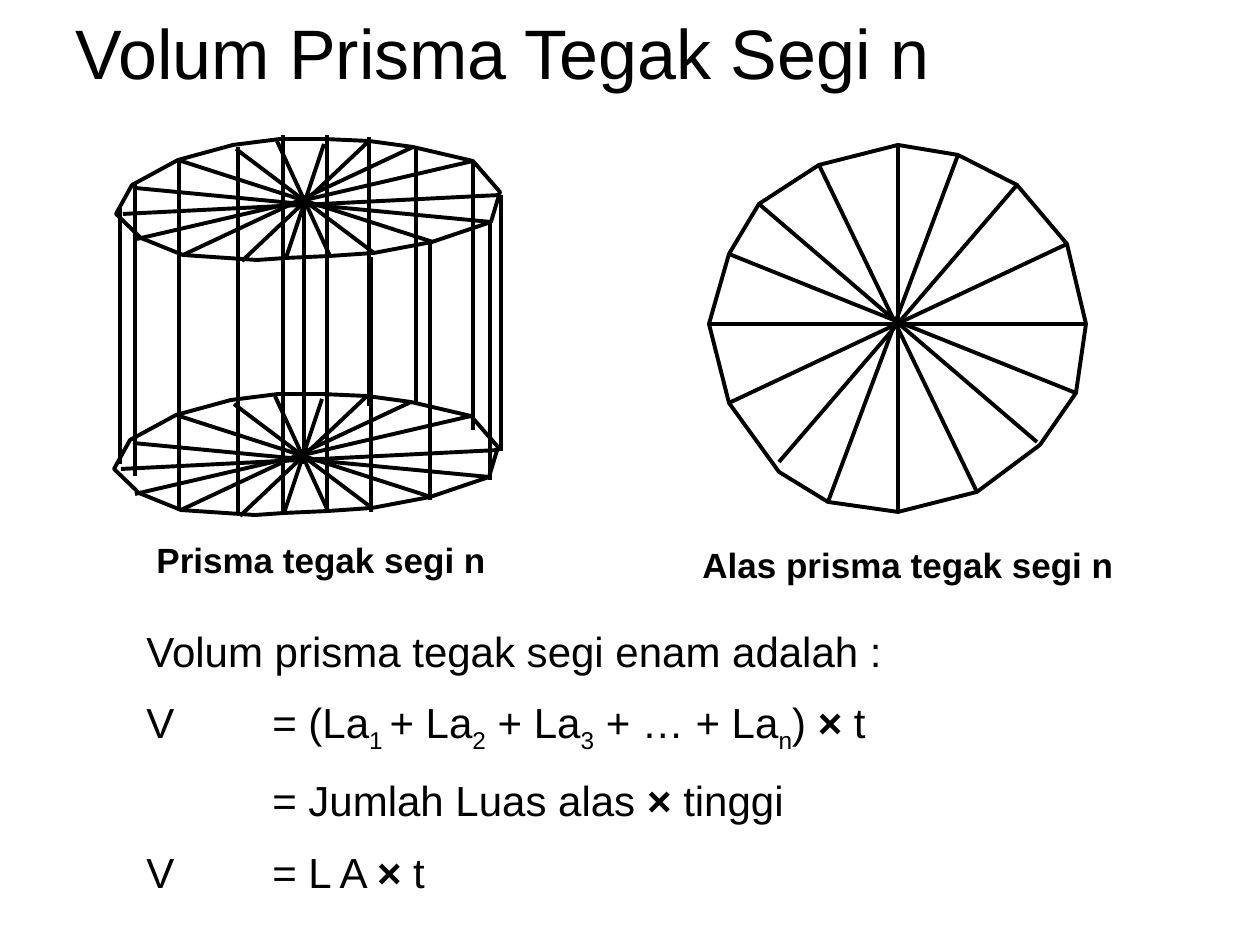
from dataclasses import dataclass

from lxml.etree import SubElement
from pptx import Presentation
from pptx.dml.color import RGBColor
from pptx.enum.shapes import MSO_CONNECTOR
from pptx.enum.text import MSO_ANCHOR
from pptx.oxml.ns import qn
from pptx.util import Pt

PX = 914400 / 126


@dataclass(frozen=True)
class Theme:
    ink: RGBColor = RGBColor(0, 0, 0)
    paper: RGBColor = RGBColor(255, 255, 255)
    font: str = "Arial"
    title: Pt = Pt(40)
    body: Pt = Pt(24)
    caption: Pt = Pt(20)
    stroke: Pt = Pt(2.25)
    paragraph_gap: Pt = Pt(12)


THEME = Theme()
EQUALS_TAB = 126

PRISM_RIM = [(116, 214), (132, 185), (178, 160), (233, 145), (280, 139), (324, 139),
             (369, 141), (413, 147), (473, 161), (500, 192), (491, 222), (432, 242),
             (374, 253), (330, 256), (286, 258), (257, 260), (183, 255), (141, 238)]
PRISM_SPOKES = [((123, 214), (501, 195)), ((135, 188), (491, 222)),
                ((178, 160), (433, 242)), ((236, 149), (374, 253)),
                ((277, 141), (330, 256)), ((324, 144), (286, 258)),
                ((369, 141), (242, 261)), ((413, 147), (183, 255)),
                ((473, 161), (137, 239))]
BASE_SHIFT = (-2, 255)
# Upright edges as x, top, bottom; the first is the axis
PRISM_EDGES = [(304, 195, 464), (120, 208, 464), (135, 232, 476), (179, 244, 508),
               (238, 257, 513), (283, 257, 513), (327, 257, 510), (371, 257, 512),
               (430, 244, 500), (490, 221, 480), (501, 195, 451), (135, 184, 440),
               (179, 159, 415), (238, 147, 403), (283, 135, 403), (327, 135, 391),
               (369, 137, 406), (416, 147, 403), (473, 163, 430)]

POLYGON_RIM = [(709, 324), (729, 254), (759, 204), (819, 165), (898, 145), (958, 155),
               (1017, 185), (1067, 244), (1086, 324), (1076, 393), (1040, 445),
               (977, 492), (898, 512), (828, 502), (779, 472), (729, 403)]
POLYGON_SPOKES = [((898, 145), (898, 512)), ((709, 324), (1086, 324)),
                  ((1017, 185), (779, 462)), ((759, 204), (1037, 442)),
                  ((819, 165), (977, 492)), ((958, 155), (828, 502)),
                  ((729, 254), (1076, 393)), ((1067, 244), (729, 403))]

# Each line is a list of (text, style); style is "", "sub" or "bold"
FORMULA = [
    [("Volum prisma tegak segi enam adalah :", "")],
    [("V \t= (La", ""), ("1 ", "sub"), ("+ La", ""), ("2", "sub"), (" + La", ""),
     ("3", "sub"), (" + … + La", ""), ("n", "sub"), (") ", ""), ("×", "bold"), (" t", "")],
    [("\t= Jumlah Luas alas ", ""), ("× ", "bold"), ("tinggi", "")],
    [("V\t= L A ", ""), ("×", "bold"), (" t", "")],
]


def px(length):
    return round(length * PX)


def add_line(shapes, start, end):
    line = shapes.add_connector(MSO_CONNECTOR.STRAIGHT, *map(px, start + end))
    line.line.color.rgb = THEME.ink
    line.line.width = THEME.stroke
    SubElement(line._element.spPr, qn("a:effectLst"))


def add_outline(shapes, points):
    builder = shapes.build_freeform(*points[0], scale=PX)
    builder.add_line_segments(points[1:], close=True)
    outline = builder.convert_to_shape()
    outline.fill.background()
    outline.line.color.rgb = THEME.ink
    outline.line.width = THEME.stroke
    outline.shadow.inherit = False


def add_wheel(shapes, rim, spokes, shift=(0, 0)):
    """Draw a polygon and the lines that join its opposite corners."""
    def move(point):
        return point[0] + shift[0], point[1] + shift[1]

    for start, end in spokes:
        add_line(shapes, move(start), move(end))
    add_outline(shapes, [move(point) for point in rim])


def set_tab(paragraph, position):
    properties = paragraph._p.get_or_add_pPr()
    stops = SubElement(properties, qn("a:tabLst"))
    SubElement(stops, qn("a:tab"), pos=str(px(position)), algn="l")
    # The schema wants tab stops ahead of the default run properties
    properties.find(qn("a:defRPr")).addprevious(stops)


def add_text(slide, box, lines, size, bold=None, anchor=MSO_ANCHOR.TOP):
    frame = slide.shapes.add_textbox(*map(px, box)).text_frame
    frame.word_wrap = True
    frame.vertical_anchor = anchor
    for index, line in enumerate(lines):
        paragraph = frame.add_paragraph() if index else frame.paragraphs[0]
        font = paragraph.font
        font.name, font.size, font.bold = THEME.font, size, bold
        font.color.rgb = THEME.ink
        if index:
            paragraph.space_before = THEME.paragraph_gap
            set_tab(paragraph, EQUALS_TAB)
        for text, style in line:
            run = paragraph.add_run()
            run.text = text
            if style == "bold":
                run.font.bold = True
            elif style == "sub":
                run._r.get_or_add_rPr().set("baseline", "-25000")


def add_prism(slide):
    shapes = slide.shapes.add_group_shape().shapes
    for shift in ((0, 0), BASE_SHIFT):
        add_wheel(shapes, PRISM_RIM, PRISM_SPOKES, shift)
    for x, top, bottom in PRISM_EDGES:
        add_line(shapes, (x, top), (x, bottom))


def add_base_polygon(slide):
    add_wheel(slide.shapes.add_group_shape().shapes, POLYGON_RIM, POLYGON_SPOKES)


def main():
    deck = Presentation()
    deck.slide_width, deck.slide_height = px(1260), px(945)
    slide = deck.slides.add_slide(deck.slide_layouts[6])
    slide.background.fill.solid()
    slide.background.fill.fore_color.rgb = THEME.paper

    add_prism(slide)
    add_base_polygon(slide)
    add_text(slide, (134, 619, 983, 290), FORMULA, THEME.body)
    for box, caption in (((144, 532, 358, 54), "Prisma tegak segi n"),
                         ((690, 537, 466, 54), "Alas prisma tegak segi n")):
        add_text(slide, box, [[(caption, "")]], THEME.caption, bold=True)
    add_text(slide, (63, 17, 1134, 68), [[("Volum Prisma Tegak Segi n", "")]],
             THEME.title, anchor=MSO_ANCHOR.MIDDLE)
    deck.save("out.pptx")


if __name__ == "__main__":
    main()
